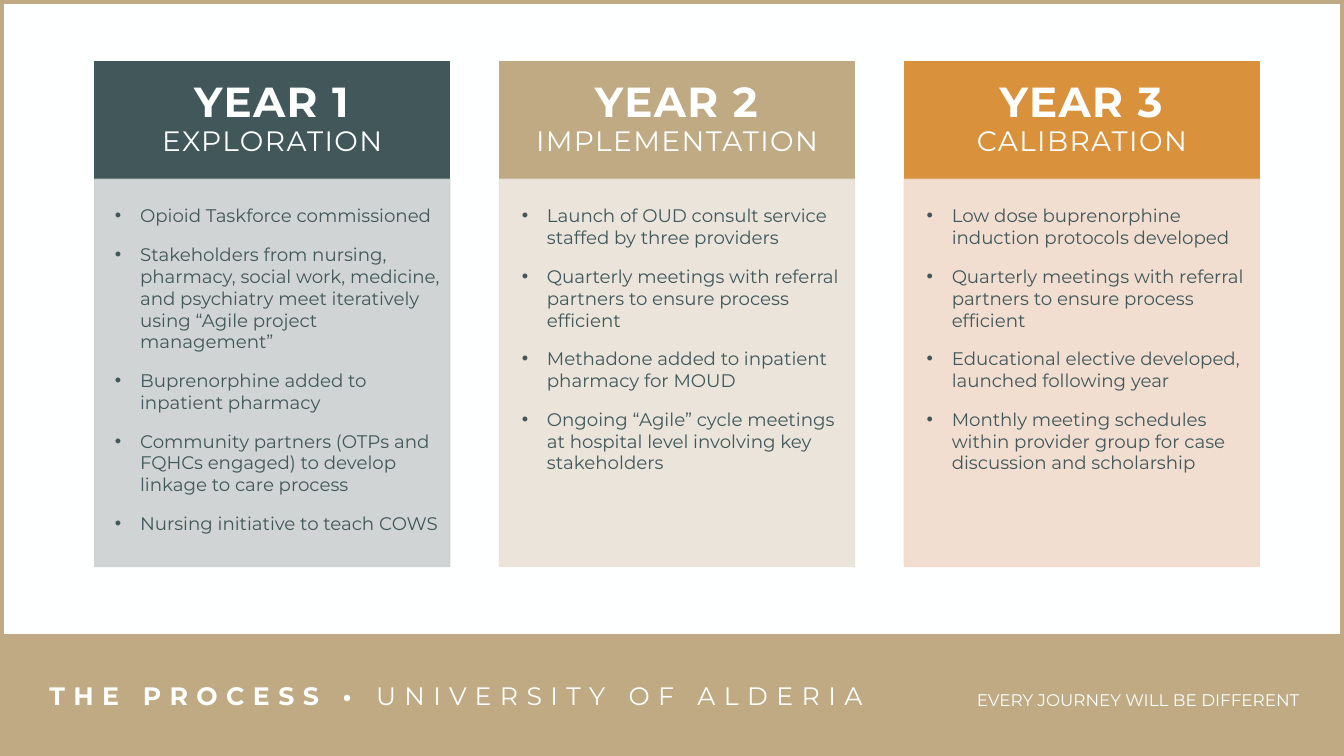
from lxml.etree import SubElement
from pptx import Presentation
from pptx.dml.color import RGBColor
from pptx.enum.shapes import MSO_SHAPE as Shape
from pptx.enum.text import MSO_ANCHOR as Anchor, MSO_AUTO_SIZE as AutoSize, PP_ALIGN as Align
from pptx.oxml.ns import qn
from pptx.util import Inches, Pt

WIDTH, HEIGHT = 13.33, 7.5
FONT = "Montserrat"
WHITE = RGBColor(0xFE, 0xFF, 0xFF)
TAN = RGBColor(0xBF, 0xAA, 0x83)
SLATE = RGBColor(0x41, 0x57, 0x59)
ORANGE = RGBColor(0xD9, 0x92, 0x3B)
PALE_SLATE = RGBColor(0xCD, 0xD0, 0xD0)
PALE_TAN = RGBColor(0xE8, 0xE2, 0xD8)
PALE_ORANGE = RGBColor(0xF1, 0xDB, 0xCD)

# Column grid
GRID_LEFT, GRID_TOP = 0.94, 0.61
COLUMN_WIDTH, COLUMN_HEIGHT, COLUMN_PITCH = 3.52, 5.01, 4.015
HEADER_HEIGHT = 1.17
FOOTER_HEIGHT = 1.21

# Title, phase, header colour, panel colour, list inset, list items
YEARS = [
    ("YEAR 1", "EXPLORATION", SLATE, PALE_SLATE, 0.06, [
        "Opioid Taskforce commissioned",
        "Stakeholders from nursing, pharmacy, social work, medicine, and psychiatry "
        "meet iteratively using “Agile project management”",
        "Buprenorphine added to inpatient pharmacy",
        "Community partners (OTPs and FQHCs engaged) to develop linkage to care process",
        "Nursing initiative to teach COWS",
    ]),
    ("YEAR 2", "IMPLEMENTATION", TAN, PALE_TAN, 0.08, [
        "Launch of OUD consult service staffed by three providers",
        "Quarterly meetings with referral partners to ensure process efficient",
        "Methadone added to inpatient pharmacy for MOUD",
        "Ongoing “Agile” cycle meetings at hospital level involving key stakeholders",
    ]),
    ("YEAR 3", "CALIBRATION", ORANGE, PALE_ORANGE, 0.08, [
        "Low dose buprenorphine induction protocols developed",
        "Quarterly meetings with referral partners to ensure process efficient",
        "Educational elective developed, launched following year",
        "Monthly meeting schedules within provider group for case discussion and scholarship",
    ]),
]


def inches(*lengths):
    return [Inches(length) for length in lengths]


def add_text(paragraph, text, size, color=WHITE, bold=False, spacing=0):
    run = paragraph.add_run()
    run.text = text
    font = run.font
    font.name, font.size, font.bold = FONT, Pt(size), bold
    font.color.rgb = color
    if spacing:
        run._r.get_or_add_rPr().set("spc", str(spacing * 100))


def set_frame(shape, inset, anchor=Anchor.MIDDLE):
    frame = shape.text_frame
    frame.word_wrap = True
    frame.auto_size = AutoSize.NONE
    frame.vertical_anchor = anchor
    frame.margin_left = frame.margin_right = Inches(inset)
    frame.margin_top = frame.margin_bottom = Inches(inset)
    return frame


def set_bullet(paragraph, bullet=None, margin=0, indent=0):
    properties = paragraph._p.get_or_add_pPr()
    properties.set("marL", str(Inches(margin)))
    properties.set("indent", str(Inches(indent)))
    if bullet:
        SubElement(properties, qn("a:buFont"), typeface="Arial")
        SubElement(properties, qn("a:buChar"), char=bullet)
    else:
        SubElement(properties, qn("a:buNone"))


def add_rectangle(shapes, box, fill, line=None, line_width=1, opacity=100):
    shape = shapes.add_shape(Shape.RECTANGLE, *inches(*box))
    shape.shadow.inherit = False
    shape.fill.solid()
    shape.fill.fore_color.rgb = fill
    if line is None:
        shape.line.fill.background()
    else:
        shape.line.color.rgb = line
        shape.line.width = Pt(line_width)
    if opacity < 100:
        for color in shape._element.spPr.iter(qn("a:srgbClr")):
            SubElement(color, qn("a:alpha"), val=str(opacity * 1000))


def place(shape, box):
    shape.left, shape.top, shape.width, shape.height = inches(*box)


def add_frame(slide):
    add_rectangle(slide.shapes, (0, 0, WIDTH, HEIGHT), WHITE, TAN, 6)


def add_footer(slide, left, top, width, height):
    add_rectangle(slide.shapes, (left, top, width, height), TAN)
    text_top, text_height = top + 0.25, 0.71

    title, tagline = slide.placeholders
    place(title, (left + 0.44, text_top, width * 2 / 3, text_height))
    paragraph = set_frame(title, 0.05).paragraphs[0]
    paragraph.alignment = Align.LEFT
    add_text(paragraph, "THE PROCESS • ", 18, bold=True, spacing=6)
    add_text(paragraph, "UNIVERSITY OF ALDERIA", 18, spacing=6)

    place(tagline, (left + width / 2, text_top, width / 2 - 0.44, text_height))
    paragraph = set_frame(tagline, 0).paragraphs[0]
    paragraph.alignment = Align.RIGHT
    paragraph.line_spacing = 1.5
    paragraph.space_before = Pt(30)
    set_bullet(paragraph)
    add_text(paragraph, "EVERY JOURNEY WILL BE DIFFERENT", 12)

    # Bring the placeholders in front of the band
    for placeholder in (title, tagline):
        slide.shapes._spTree.append(placeholder._element)


def add_year(slide, box, year, phase, color, panel_color, inset, items):
    left, top, width, height = box
    shapes = slide.shapes.add_group_shape().shapes

    # Header
    add_rectangle(shapes, (left, top, width, HEADER_HEIGHT), color, color)
    header = shapes.add_textbox(*inches(left + 0.1, top + 0.05, width - 0.2, 1.05))
    paragraph = set_frame(header, 0.13).paragraphs[0]
    paragraph.alignment = Align.CENTER
    paragraph.line_spacing = 0.9
    add_text(paragraph, year, 30, bold=True, spacing=1)
    paragraph.add_line_break()
    add_text(paragraph, phase, 20, spacing=1)

    # Panel and list
    panel_top, panel_height = top + HEADER_HEIGHT, height - HEADER_HEIGHT
    add_rectangle(shapes, (left, panel_top, width, panel_height),
                  panel_color, panel_color, opacity=90)
    list_top = panel_top + 0.25 - inset
    steps = shapes.add_textbox(*inches(left, list_top, width - 0.02, 3.43))
    frame = set_frame(steps, inset, Anchor.TOP)
    for index, item in enumerate(items):
        paragraph = frame.add_paragraph() if index else frame.paragraphs[0]
        paragraph.level = 1
        paragraph.space_before = Pt(12)
        set_bullet(paragraph, "•", 0.39, -0.25)
        add_text(paragraph, item, 13, SLATE)


def main():
    presentation = Presentation()
    presentation.slide_width, presentation.slide_height = inches(WIDTH, HEIGHT)
    slide = presentation.slides.add_slide(presentation.slide_layouts[1])
    slide.background.fill.solid()
    slide.background.fill.fore_color.rgb = WHITE

    add_frame(slide)
    add_footer(slide, 0, HEIGHT - FOOTER_HEIGHT, WIDTH, FOOTER_HEIGHT)
    for column, year in enumerate(YEARS):
        left = GRID_LEFT + column * COLUMN_PITCH
        add_year(slide, (left, GRID_TOP, COLUMN_WIDTH, COLUMN_HEIGHT), *year)
    presentation.save("out.pptx")


if __name__ == "__main__":
    main()
